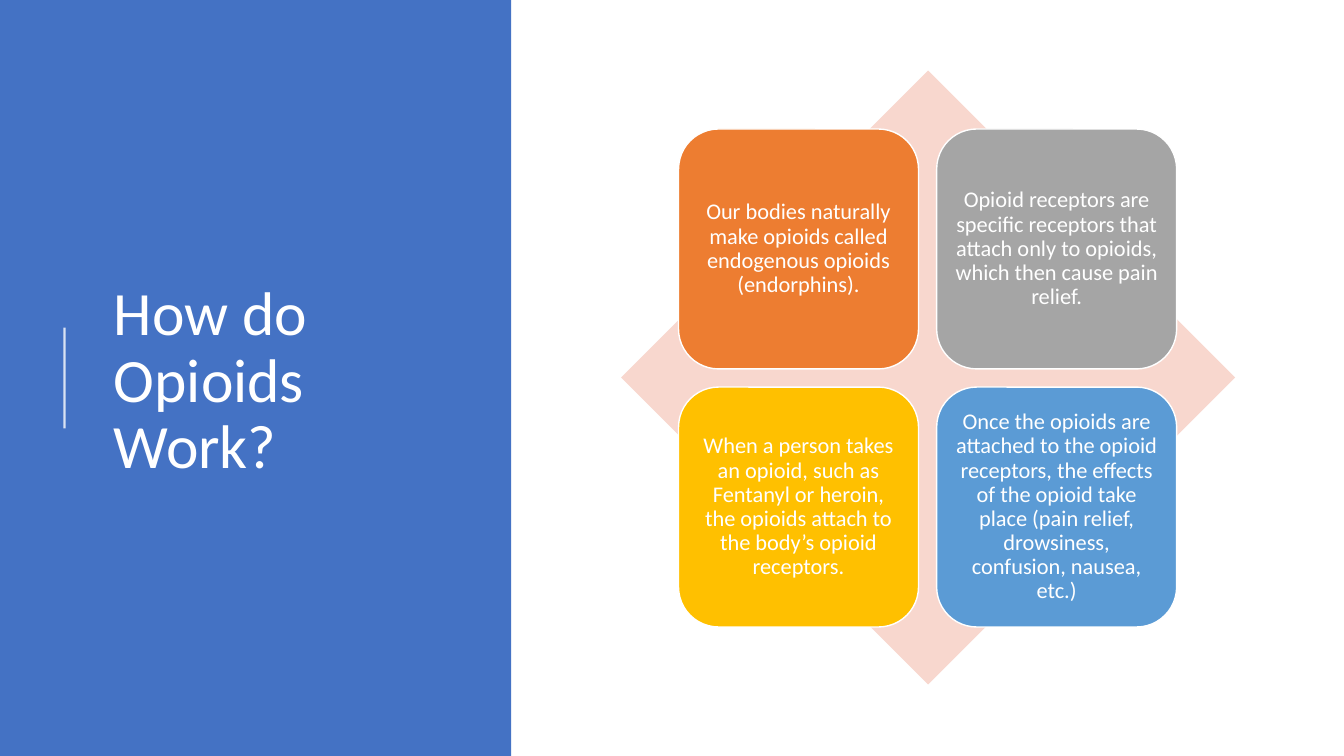
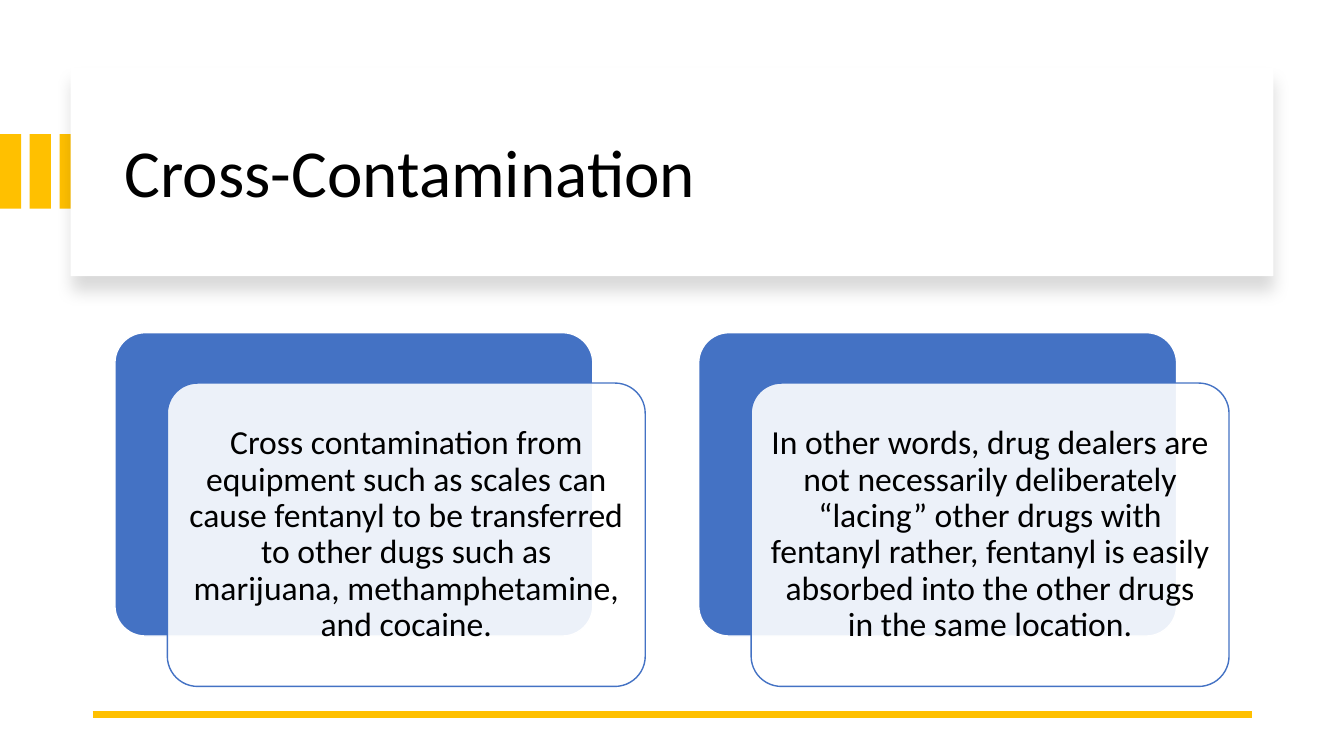
from pptx import Presentation
from pptx.dml.color import RGBColor
from pptx.enum.shapes import MSO_CONNECTOR, MSO_SHAPE
from pptx.enum.text import MSO_ANCHOR, PP_ALIGN
from pptx.oxml.ns import qn
from pptx.util import Inches, Pt
from lxml import etree

RECT = MSO_SHAPE.RECTANGLE
ROUND = MSO_SHAPE.ROUNDED_RECTANGLE
DIAMOND = MSO_SHAPE.DIAMOND
STRAIGHT = MSO_CONNECTOR.STRAIGHT
MIDDLE = MSO_ANCHOR.MIDDLE
LEFT, CENTER = PP_ALIGN.LEFT, PP_ALIGN.CENTER

FONT = "Calibri"
COLORS = {
    "white": "FFFFFF", "black": "000000", "blue": "4472C4",
    "orange": "ED7D31", "gray": "A5A5A5", "gold": "FFC000",
    "sky": "5B9BD5", "pink": "F8D7CE",
}

TILES = [
    ("orange", "Our bodies naturally make opioids called endogenous opioids "
               "(endorphins)."),
    ("gray", "Opioid receptors are specific receptors that attach only to "
             "opioids, which then cause pain relief."),
    ("gold", "When a person takes an opioid, such as Fentanyl or heroin, the "
             "opioids attach to the body’s opioid receptors."),
    ("sky", "Once the opioids are attached to the opioid receptors, the "
            "effects of the opioid take place (pain relief, drowsiness, "
            "confusion, nausea, etc.)"),
]
CARDS = [
    "Cross contamination from equipment such as scales can cause fentanyl to "
    "be transferred to other dugs such as marijuana, methamphetamine, and "
    "cocaine.",
    "In other words, drug dealers are not necessarily deliberately “lacing” "
    "other drugs with fentanyl rather, fentanyl is easily absorbed into the "
    "other drugs in the same location.",
]


def rgb(name):
    return RGBColor.from_string(COLORS[name])


def fade(owner, percent):
    """Set the opacity of the first solid colour inside an element."""
    color = next(owner.iter(qn("a:srgbClr")))
    etree.SubElement(color, qn("a:alpha")).set("val", str(percent * 1000))


def add_box(slide, kind, box, fill, line=None, adj=None):
    shape = slide.shapes.add_shape(kind, *map(Inches, box))
    shape.shadow.inherit = False
    shape.fill.solid()
    shape.fill.fore_color.rgb = rgb(fill)
    if line:
        shape.line.color.rgb = rgb(line)
        shape.line.width = Pt(1)
    else:
        shape.line.fill.background()
    if adj is not None:
        shape.adjustments[0] = adj
    return shape


def add_line(slide, start, end, color, width):
    line = slide.shapes.add_connector(
        STRAIGHT, *map(Inches, (*start, *end)))
    line.line.color.rgb = rgb(color)
    line.line.width = Pt(width)
    etree.SubElement(line._element.spPr, qn("a:effectLst"))
    return line


def set_text(shape, text, size, color, align=CENTER, pad=(0.1, 0.1)):
    frame = shape.text_frame
    frame.text = text
    frame.word_wrap = True
    frame.vertical_anchor = MIDDLE
    frame.margin_left = frame.margin_right = Inches(pad[0])
    frame.margin_top = frame.margin_bottom = Inches(pad[1])
    para = frame.paragraphs[0]
    para.alignment = align
    para.line_spacing = 0.9
    font = para.runs[0].font
    font.name = FONT
    font.size = Pt(size)
    font.color.rgb = rgb(color)


def add_title(slide, box, text, size, color):
    title = slide.shapes.add_textbox(*map(Inches, box))
    set_text(title, text, size, color, LEFT, (0.1, 0.05))


def add_shade(shape):
    """Give a shape a soft shadow that falls straight down."""
    effects = shape._element.spPr.find(qn("a:effectLst"))
    shade = etree.SubElement(effects, qn("a:outerShdw"))
    values = {"blurRad": Pt(11), "dist": Pt(10), "dir": 90 * 60000}
    for key, value in values.items():
        shade.set(key, str(int(value)))
    etree.SubElement(shade, qn("a:srgbClr")).set("val", COLORS["black"])
    fade(shade, 15)


def add_card(slide, left, text):
    top, width, height = 3.3, 4.74, 3.01
    add_box(slide, ROUND, (left, top, width, height), "blue", "white", 0.1)
    front = add_box(slide, ROUND, (left + 0.52, top + 0.5, width, height),
                    "white", "blue", 0.1)
    fade(front.fill._xPr, 90)
    set_text(front, text, 24, "black")


def build_work(slide):
    # Title panel
    add_box(slide, RECT, (0, 0, 5.07, 7.5), "blue")
    add_title(slide, (1.03, 0.78, 3.69, 6.02), "How do Opioids Work?",
              44, "white")
    rule = add_line(slide, (0.64, 3.25), (0.64, 4.25), "white", 1.5)
    fade(rule.line._ln, 80)

    # Diamond with a two by two grid
    add_box(slide, DIAMOND, (6.16, 0.7, 6.09, 6.09), "pink")
    side, step = 2.38, 2.56
    for i, (fill, text) in enumerate(TILES):
        row, col = divmod(i, 2)
        box = (6.73 + col * step, 1.28 + row * step, side, side)
        tile = add_box(slide, ROUND, box, fill, "white")
        set_text(tile, text, 16, "white", pad=(0.07, 0.07))


def build_cross(slide):
    # Title band
    for i in range(3):
        add_box(slide, RECT, (i * 0.295, 1.33, 0.21, 0.74), "gold")
    band = add_box(slide, RECT, (0.7, 0.67, 11.93, 2.07), "white")
    add_shade(band)
    add_title(slide, (1.14, 0.89, 11.13, 1.7), "Cross-Contamination",
              48, "black")

    # Footer rule and cards
    add_line(slide, (0.92, 7.09), (12.42, 7.09), "gold", 4.5)
    for i, text in enumerate(CARDS):
        add_card(slide, 1.14 + i * 5.79, text)


def main():
    deck = Presentation()
    deck.slide_width, deck.slide_height = Inches(13.33), Inches(7.5)
    blank = deck.slide_layouts[6]
    for build in (build_work, build_cross):
        build(deck.slides.add_slide(blank))
    deck.save("out.pptx")


if __name__ == "__main__":
    main()
